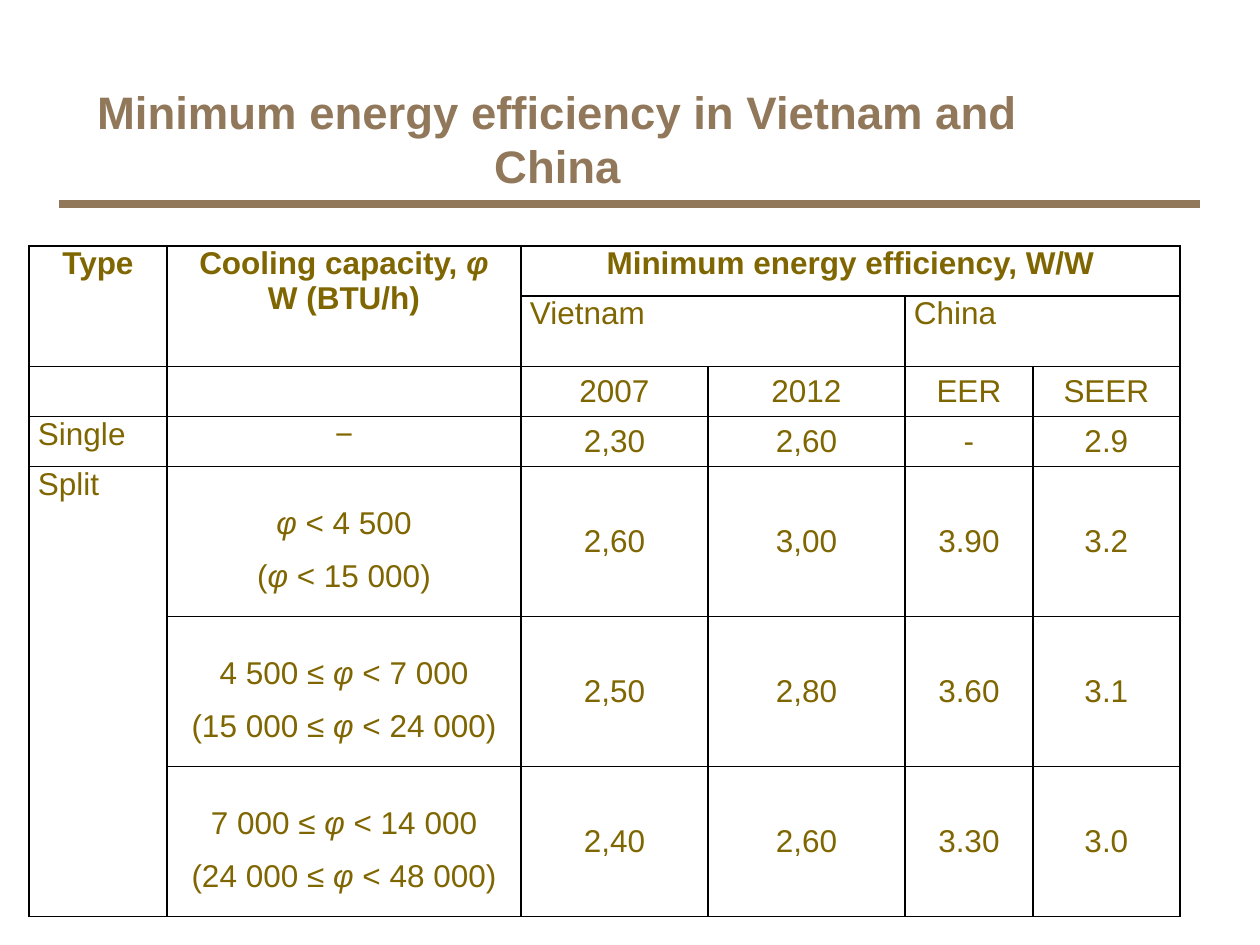
from dataclasses import dataclass

from lxml import etree
from pptx import Presentation
from pptx.dml.color import RGBColor
from pptx.enum.shapes import MSO_CONNECTOR
from pptx.enum.text import MSO_ANCHOR, PP_ALIGN
from pptx.oxml.ns import qn
from pptx.util import Pt

STRAIGHT = MSO_CONNECTOR.STRAIGHT
CENTER, JUSTIFY = PP_ALIGN.CENTER, PP_ALIGN.JUSTIFY
TOP, MIDDLE, BOTTOM = MSO_ANCHOR.TOP, MSO_ANCHOR.MIDDLE, MSO_ANCHOR.BOTTOM

EMU_PER_PX = 914400 / 126


@dataclass(frozen=True)
class Theme:
    font: str = "Arial"
    accent: str = "91785B"
    table_text: str = "7F6600"
    border: str = "000000"
    title_size: int = 26
    table_size: int = 18
    rule_width: int = 5
    border_width: int = 1


THEME = Theme()
PHI = "φ"

COLUMN_WIDTHS = [138, 354, 187, 197, 128, 147]
ROW_HEIGHTS = [50] * 4 + [150] * 3
CELL_MARGINS = {"margin_left": 9, "margin_right": 9, "margin_top": 0, "margin_bottom": 0}
HEADER_ROWS = 2
FIRST_VALUE_COLUMN = 2

# None marks a cell that is empty or covered by a merged one
ROWS = [
    ["Type", "Cooling capacity, φ\nW (BTU/h)", "Minimum energy efficiency, W/W", None, None, None],
    [None, None, "Vietnam", None, "China", None],
    [None, None, "2007", "2012", "EER", "SEER"],
    ["Single", "−", "2,30", "2,60", "-", "2.9"],
    ["Split", "φ < 4 500\n(φ < 15 000)", "2,60", "3,00", "3.90", "3.2"],
    [None, "4 500 ≤ φ < 7 000\n(15 000 ≤ φ < 24 000)", "2,50", "2,80", "3.60", "3.1"],
    [None, "7 000 ≤ φ < 14 000\n(24 000 ≤ φ < 48 000)", "2,40", "2,60", "3.30", "3.0"],
]

# First and last cell of each merged range, as (row, column)
MERGES = [
    ((0, 0), (1, 0)),
    ((0, 1), (1, 1)),
    ((0, 2), (0, 5)),
    ((1, 2), (1, 3)),
    ((1, 4), (1, 5)),
    ((4, 0), (6, 0)),
]


def px(length):
    return round(length * EMU_PER_PX)


def set_attributes(target, values):
    for name, value in values.items():
        setattr(target, name, value)


def add_run(paragraph, text, size, color, **format_values):
    run = paragraph.add_run()
    run.text = text
    set_attributes(run.font, {"name": THEME.font, "size": Pt(size), **format_values})
    run.font.color.rgb = RGBColor.from_string(color)


def add_title(slide, text, left, top, width, height):
    frame = slide.shapes.add_textbox(px(left), px(top), px(width), px(height)).text_frame
    set_attributes(frame, {"word_wrap": True, "vertical_anchor": BOTTOM})
    paragraph = frame.paragraphs[0]
    paragraph.alignment = CENTER
    add_run(paragraph, text, THEME.title_size, THEME.accent, bold=True)


def add_rule(slide, left, right, y):
    rule = slide.shapes.add_connector(STRAIGHT, px(left), px(y), px(right), px(y))
    rule.line.color.rgb = RGBColor.from_string(THEME.accent)
    rule.line.width = Pt(THEME.rule_width)
    etree.SubElement(rule._element.spPr, qn("a:effectLst"))


def add_borders(cell):
    properties = cell._tc.get_or_add_tcPr()
    for index, side in enumerate(("a:lnL", "a:lnR", "a:lnT", "a:lnB")):
        line = etree.Element(qn(side), w=str(Pt(THEME.border_width)))
        fill = etree.SubElement(line, qn("a:solidFill"))
        etree.SubElement(fill, qn("a:srgbClr"), val=THEME.border)
        properties.insert(index, line)


def cell_layout(row, column):
    """Return the alignment, anchor and line spacing for a place in the table."""
    is_value = row >= HEADER_ROWS and column >= FIRST_VALUE_COLUMN
    is_range = row > 3 and column == 1
    is_label = (row == 1) or (row > 2 and column == 0)
    return (
        JUSTIFY if is_label else CENTER,
        MIDDLE if is_value or is_range else TOP,
        1.5 if is_range else 1.0,
    )


def fill_cell(cell, text, row, column):
    alignment, anchor, line_spacing = cell_layout(row, column)
    set_attributes(cell, {name: px(margin) for name, margin in CELL_MARGINS.items()})
    cell.vertical_anchor = anchor
    cell.fill.background()
    add_borders(cell)
    if text is None:
        return
    frame = cell.text_frame
    for index, line in enumerate(text.split("\n")):
        paragraph = frame.add_paragraph() if index else frame.paragraphs[0]
        set_attributes(paragraph, {"alignment": alignment, "line_spacing": line_spacing})
        # The symbol for capacity is set in italics
        for part in filter(None, line.partition(PHI)):
            add_run(paragraph, part, THEME.table_size, THEME.table_text,
                    bold=row == 0, italic=part == PHI)


def add_efficiency_table(slide, left, top):
    table = slide.shapes.add_table(
        len(ROWS), len(COLUMN_WIDTHS), px(left), px(top),
        px(sum(COLUMN_WIDTHS)), px(sum(ROW_HEIGHTS)),
    ).table
    set_attributes(table, {"first_row": False, "horz_banding": False})
    for column, width in zip(table.columns, COLUMN_WIDTHS):
        column.width = px(width)
    for row, height in zip(table.rows, ROW_HEIGHTS):
        row.height = px(height)
    for first, last in MERGES:
        table.cell(*first).merge(table.cell(*last))
    for row, texts in enumerate(ROWS):
        for column, text in enumerate(texts):
            fill_cell(table.cell(row, column), text, row, column)


def main():
    presentation = Presentation()
    set_attributes(presentation, {"slide_width": px(1260), "slide_height": px(945)})
    slide = presentation.slides.add_slide(presentation.slide_layouts[6])

    # Heading with its rule
    add_rule(slide, 59, 1200, 204)
    # Efficiency values by type and capacity
    add_efficiency_table(slide, 29, 246)
    add_title(slide, "Minimum energy efficiency in Vietnam and China", 29, 76, 1057, 123)

    presentation.save("out.pptx")


if __name__ == "__main__":
    main()
